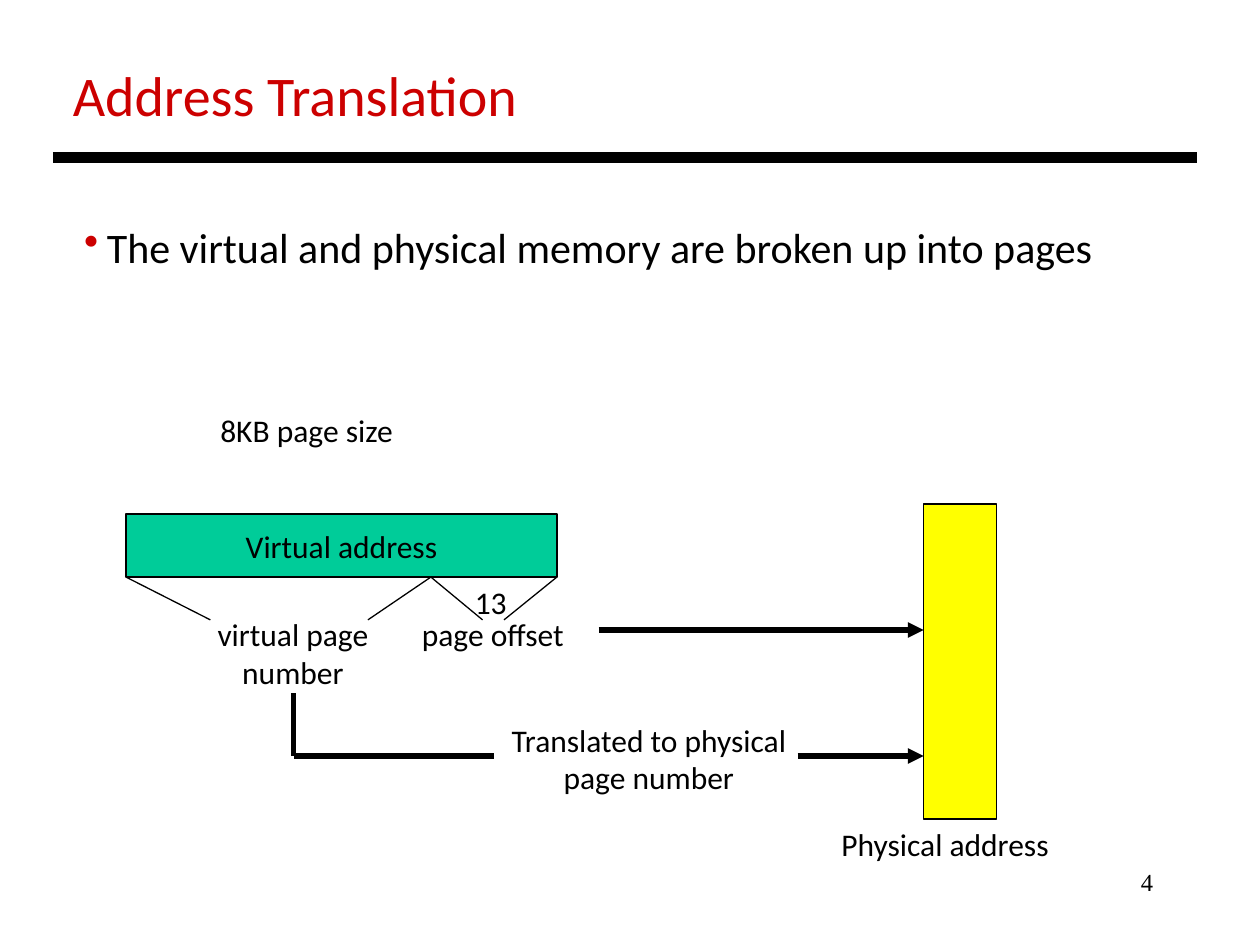
from dataclasses import dataclass
from lxml.etree import SubElement
from pptx import Presentation
from pptx.dml.color import RGBColor as Rgb
from pptx.enum.shapes import MSO_CONNECTOR as Conn, MSO_SHAPE as Shape
from pptx.enum.text import MSO_ANCHOR as Anchor, PP_ALIGN as Align
from pptx.oxml.ns import qn
from pptx.util import Inches, Pt


@dataclass(frozen=True)
class Theme:
    """Colours, fonts and sizes in points."""
    ink: str = "000000"
    red: str = "CC0000"
    green: str = "00CC99"
    yellow: str = "FFFF00"
    font: str = "Calibri"
    serif: str = "Times New Roman"
    title: int = 32
    lead: int = 24
    label: int = 18
    page: int = 14
    thin: float = 0.75
    bold: int = 3
    rule: int = 6


class Deck:
    """Draws styled elements on the current slide."""

    def __init__(self, theme):
        self.theme = theme
        self.prs = Presentation()
        self.prs.slide_width, self.prs.slide_height = Inches(10), Inches(7.5)
        self.slide = self.prs.slides.add_slide(self.prs.slide_layouts[6])

    def fit(self, frame, text, size=None, color=None, font=None, align=Align.LEFT):
        frame.word_wrap = False
        frame.text = text
        for para in frame.paragraphs:
            para.alignment = align
            para.font.size = Pt(size or self.theme.label)
            para.font.name = font or self.theme.font
            para.font.color.rgb = Rgb.from_string(color or self.theme.ink)

    def text(self, area, text, **style):
        frame = self.slide.shapes.add_textbox(*map(Inches, area)).text_frame
        self.fit(frame, text, **style)
        return frame

    def bullet(self, area, text):
        frame = self.text(area, text, size=self.theme.lead)
        props = frame.paragraphs[0]._p.get_or_add_pPr()
        gap = Inches(0.18)
        props.set("marL", str(gap))
        props.set("indent", str(-gap))
        color = SubElement(props, qn("a:buClr"))
        SubElement(color, qn("a:srgbClr"), val=self.theme.red)
        SubElement(props, qn("a:buChar"), char="•")
        props.append(props.find(qn("a:defRPr")))

    def box(self, area, fill, text=""):
        shape = self.slide.shapes.add_shape(Shape.RECTANGLE, *map(Inches, area))
        shape.shadow.inherit = False
        shape.fill.solid()
        shape.fill.fore_color.rgb = Rgb.from_string(fill)
        shape.line.color.rgb = Rgb.from_string(self.theme.ink)
        shape.line.width = Pt(self.theme.thin)
        if text:
            shape.text_frame.vertical_anchor = Anchor.MIDDLE
            self.fit(shape.text_frame, text, align=Align.CENTER)

    def line(self, start, end, width, arrow=False):
        ends = map(Inches, (*start, *end))
        line = self.slide.shapes.add_connector(Conn.STRAIGHT, *ends)
        line.line.color.rgb = Rgb.from_string(self.theme.ink)
        line.line.width = Pt(width)
        props = line._element.spPr
        if arrow:
            SubElement(props.find(qn("a:ln")), qn("a:tailEnd"), type="triangle")
        SubElement(props, qn("a:effectLst"))

    def save(self):
        self.prs.save("out.pptx")


def main():
    look = Theme()
    deck = Deck(look)
    deck.text((7.17, 6.83, 2.08, 0.5), "4", size=look.page, font=look.serif,
              align=Align.RIGHT)
    deck.text((0.48, 0.43, 3.77, 0.64), "Address Translation",
              size=look.title, color=look.red)
    deck.line((0.42, 1.25), (9.5, 1.25), look.rule)
    deck.bullet((0.57, 1.71, 8.34, 0.5),
                "The virtual and physical memory are broken up into pages")

    left, split, right = 1, 3.42, 4.42
    top, base, tip = 4.08, 4.58, 4.92
    deck.box((left, top, right - left, base - top), look.green, "Virtual address")
    for edge, end in ((split, 3.83), (right, 4), (left, 1.67), (split, 2.92)):
        deck.line((edge, base), (end, tip), look.thin)

    stem, wall, low, high = 2.33, 7.33, 6, 5
    deck.line((stem, 5.5), (stem, low), look.bold)
    deck.line((stem, low), (3.92, low), look.bold)
    for start, level in ((6.33, low), (4.75, high)):
        deck.line((start, level), (wall, level), look.bold, arrow=True)
    deck.box((wall, 4, 0.58, 2.5), look.yellow)

    for area, words in (
        ((1.65, 3.21, 1.59, 0.4), "8KB page size"),
        ((3.25, 4.83, 1.35, 0.4), "page offset"),
        ((1.62, 4.83, 1.41, 0.71), "virtual page\nnumber"),
        ((3.95, 5.67, 2.4, 0.71), "Translated to physical\npage number"),
        ((6.58, 6.5, 1.86, 0.4), "Physical address"),
        ((3.67, 4.58, 0.46, 0.4), "13"),
    ):
        deck.text(area, words, align=Align.CENTER if "\n" in words else Align.LEFT)
    deck.save()


if __name__ == "__main__":
    main()
